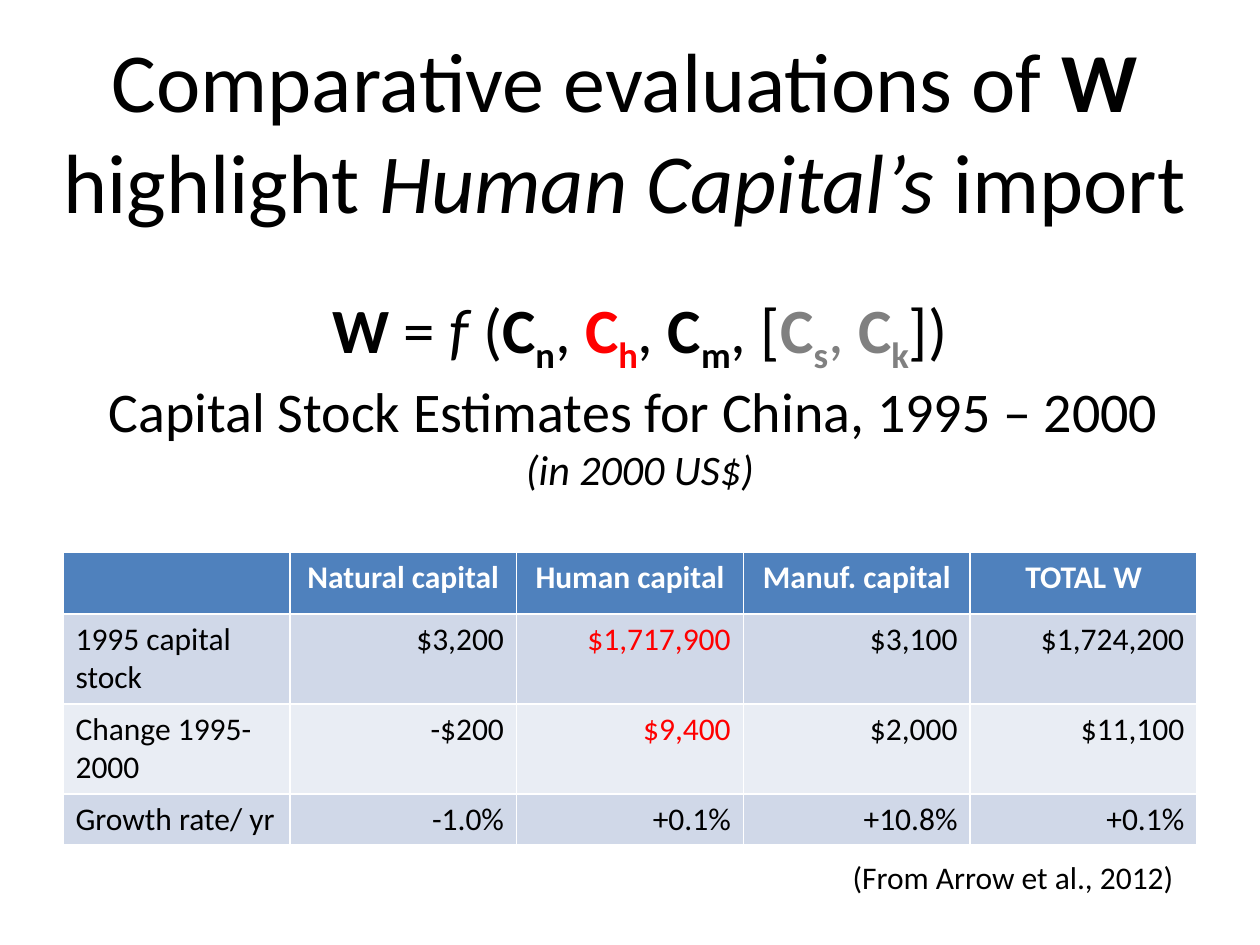
from pptx import Presentation
from pptx.dml.color import RGBColor
from pptx.enum.text import MSO_ANCHOR, MSO_AUTO_SIZE, PP_ALIGN
from pptx.util import Emu, Pt

CENTER, RIGHT, LEFT = PP_ALIGN.CENTER, PP_ALIGN.RIGHT, PP_ALIGN.LEFT
MIDDLE, TOP = MSO_ANCHOR.MIDDLE, MSO_ANCHOR.TOP
NO_AUTOFIT = MSO_AUTO_SIZE.NONE

PIXELS_PER_INCH = 126
FONT = "Calibri"
BLACK, WHITE, RED, GRAY = "000000", "FFFFFF", "FF0000", "808080"
HEADER_FILL, BAND_FILLS = "4F81BD", ("D0D8E8", "E9EDF4")
HUMAN_CAPITAL_COLUMN = 2
BOLD, ITALIC = {"bold": True}, {"italic": True}


def px(length):
    return Emu(round(length * 914400 / PIXELS_PER_INCH))


def rgb(color):
    return RGBColor.from_string(color)


def capital(letter, color=BLACK):
    style = {"bold": True, "color": color}
    return [("C", style), (letter, {**style, "baseline": -25})]


class SlideBuilder:
    def __init__(self, presentation):
        self.slide = presentation.slides.add_slide(presentation.slide_layouts[5])
        self.style = {"name": FONT, "bold": False, "italic": False, "color": BLACK}

    def add_runs(self, paragraph, runs, size, alignment):
        paragraph.alignment = alignment
        for text, changes in runs:
            run = paragraph.add_run()
            run.text = text
            values = {**self.style, "size": Pt(size), **changes}
            run.font.color.rgb = rgb(values.pop("color"))
            baseline = values.pop("baseline", 0)
            if baseline:
                run._r.get_or_add_rPr().set("baseline", str(baseline * 1000))
            for name, value in values.items():
                setattr(run.font, name, value)

    def fill_frame(self, shape, paragraphs, alignment, anchor):
        frame = shape.text_frame
        frame.word_wrap = True
        frame.auto_size = NO_AUTOFIT
        frame.vertical_anchor = anchor
        for index, (size, runs) in enumerate(paragraphs):
            paragraph = frame.add_paragraph() if index else frame.paragraphs[0]
            self.add_runs(paragraph, runs, size, alignment)

    def title(self, box, runs, size):
        shape = self.slide.shapes.title
        shape.left, shape.top, shape.width, shape.height = map(px, box)
        self.fill_frame(shape, [(size, runs)], CENTER, MIDDLE)

    def text(self, box, paragraphs, alignment):
        shape = self.slide.shapes.add_textbox(*map(px, box))
        self.fill_frame(shape, paragraphs, alignment, TOP)

    def table(self, left, top, width, heights, rows, size):
        shape = self.slide.shapes.add_table(
            len(rows), len(rows[0]), px(left), px(top), px(width), px(sum(heights))
        )
        table = shape.table
        for row_index, (height, values) in enumerate(zip(heights, rows)):
            table.rows[row_index].height = px(height)
            header = row_index == 0
            fill = HEADER_FILL if header else BAND_FILLS[(row_index - 1) % 2]
            for column, value in enumerate(values):
                cell = table.cell(row_index, column)
                cell.fill.solid()
                cell.fill.fore_color.rgb = rgb(fill)
                alignment = CENTER if header else RIGHT if column else LEFT
                highlighted = column == HUMAN_CAPITAL_COLUMN and "$" in value
                color = WHITE if header else RED if highlighted else BLACK
                runs = [(value, {"bold": header, "color": color})] if value else []
                self.add_runs(cell.text_frame.paragraphs[0], runs, size, alignment)


def main():
    presentation = Presentation()
    presentation.slide_width, presentation.slide_height = px(1260), px(945)
    builder = SlideBuilder(presentation)

    builder.title(
        (21, 38, 1207, 183),
        [
            ("Comparative evaluations of ", {}),
            ("W ", BOLD),
            ("highlight ", {}),
            ("Human Capital’s", ITALIC),
            (" import", {}),
        ],
        48,
    )

    builder.table(
        63, 552, 1134, (62, 90, 90, 50),
        [
            ("", "Natural capital", "Human capital", "Manuf. capital", "TOTAL W"),
            ("1995 capital stock", "$3,200", "$1,717,900", "$3,100", "$1,724,200"),
            ("Change 1995-2000", "-$200", "$9,400", "$2,000", "$11,100"),
            ("Growth rate/ yr", "-1.0%", "+0.1%", "+10.8%", "+0.1%"),
        ],
        18,
    )

    formula = [
        ("W", BOLD), (" = ", {}), ("f", ITALIC), (" (", {}),
        *capital("n"), (", ", {}),
        *capital("h", RED), (", ", {}),
        *capital("m"), (", [", {}),
        *capital("s", GRAY), (", ", {"color": GRAY}),
        *capital("k", GRAY), ("])", {}),
    ]
    builder.text(
        (94, 284, 1092, 208),
        [
            (36, formula),
            (32, [("Capital Stock Estimates for China, 1995 – 2000 ", {})]),
            (24, [("(in 2000 US$)", ITALIC)]),
        ],
        CENTER,
    )

    builder.text((766, 852, 420, 50), [(18, [("(From Arrow et al., 2012)", {})])], RIGHT)
    presentation.save("out.pptx")


if __name__ == "__main__":
    main()
